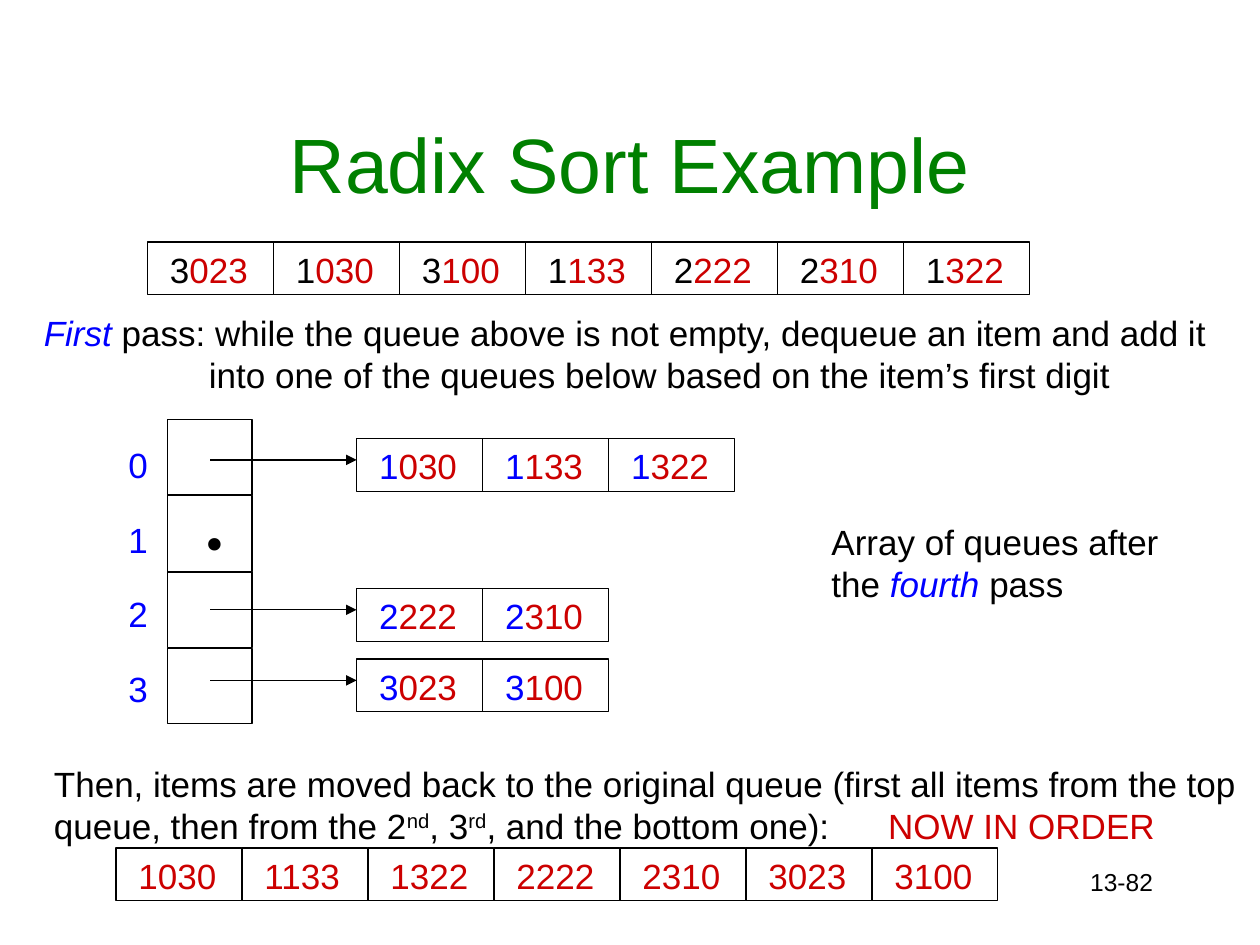
from dataclasses import dataclass

from lxml.etree import SubElement
from pptx import Presentation
from pptx.dml.color import RGBColor
from pptx.enum.shapes import MSO_CONNECTOR, MSO_SHAPE
from pptx.enum.text import MSO_ANCHOR, MSO_AUTO_SIZE, PP_ALIGN
from pptx.oxml.ns import qn
from pptx.shapes.autoshape import Shape
from pptx.slide import Slide
from pptx.text.text import Font
from pptx.util import Inches, Pt


@dataclass(frozen=True)
class Theme:
    black: str = "000000"
    blue: str = "0000FF"
    red: str = "CC0000"
    green: str = "008000"
    font: str = "Arial"
    dot_font: str = "Times New Roman"
    title_size: int = 44
    body_size: int = 20
    dot_size: int = 60
    number_size: int = 14
    line_width: float = 0.75


@dataclass(frozen=True)
class Span:
    text: str
    color: str
    italic: bool = False
    raised: bool = False


@dataclass(frozen=True)
class Queue:
    left: float
    top: float
    items: tuple[str, ...]
    lead_color: str


THEME = Theme()
CELL_WIDTH, CELL_HEIGHT = 1, 0.42
BUCKET_LEFT, BUCKET_TOP, BUCKET_STEP = 1.33, 3.33, 0.605
LABEL_TOP, LABEL_STEP = 3.47, 0.593

UNSORTED = Queue(1.17, 1.92, ("3023", "1030", "3100", "1133", "2222", "2310", "1322"), THEME.black)
SORTED = Queue(0.92, 6.73, ("1030", "1133", "1322", "2222", "2310", "3023", "3100"), THEME.red)
BUCKET_QUEUES = (
    Queue(2.83, 3.48, ("1030", "1133", "1322"), THEME.blue),
    Queue(2.83, 4.67, ("2222", "2310"), THEME.blue),
    Queue(2.83, 5.23, ("3023", "3100"), THEME.blue),
)


def style_font(font: Font, color: str, size: float, name: str = THEME.font) -> None:
    font.name = name
    font.size = Pt(size)
    font.color.rgb = RGBColor.from_string(color)


def add_text(slide: Slide, left: float, top: float, width: float, height: float,
             spans: list[Span], size: float = THEME.body_size,
             font_name: str = THEME.font) -> Shape:
    box = slide.shapes.add_textbox(Inches(left), Inches(top), Inches(width), Inches(height))
    box.text_frame.word_wrap = True
    box.text_frame.auto_size = MSO_AUTO_SIZE.SHAPE_TO_FIT_TEXT
    for span in spans:
        run = box.text_frame.paragraphs[0].add_run()
        run.text = span.text
        style_font(run.font, span.color, size, font_name)
        if span.italic:
            run.font.italic = True
        if span.raised:
            run.font._element.set("baseline", "30000")
    return box


def add_cell(slide: Slide, left: float, top: float, width: float, height: float) -> None:
    cell = slide.shapes.add_shape(
        MSO_SHAPE.RECTANGLE, Inches(left), Inches(top), Inches(width), Inches(height))
    cell.shadow.inherit = False
    cell.fill.background()
    cell.line.color.rgb = RGBColor.from_string(THEME.black)
    cell.line.width = Pt(THEME.line_width)


def add_queue(slide: Slide, queue: Queue) -> None:
    for position, item in enumerate(queue.items):
        left = queue.left + position * CELL_WIDTH
        add_cell(slide, left, queue.top, CELL_WIDTH, CELL_HEIGHT)
        if queue.lead_color == THEME.red:
            spans = [Span(item, THEME.red)]
        else:
            spans = [Span(item[0], queue.lead_color), Span(item[1:], THEME.red)]
        add_text(slide, left + 0.08, queue.top, 0.92, 0.43, spans)


def add_arrow(slide: Slide, queue: Queue) -> None:
    start, level = Inches(1.67), Inches(queue.top + 0.17)
    arrow = slide.shapes.add_connector(
        MSO_CONNECTOR.STRAIGHT, start, level, Inches(queue.left), level)
    arrow.line.color.rgb = RGBColor.from_string(THEME.black)
    arrow.line.width = Pt(THEME.line_width)
    SubElement(arrow.line._get_or_add_ln(), qn("a:tailEnd"), type="triangle")
    SubElement(arrow._element.spPr, qn("a:effectLst"))


def add_title(slide: Slide) -> None:
    title = slide.shapes.title
    title.left, title.top = Inches(0.75), Inches(0.67)
    title.width, title.height = Inches(8.5), Inches(1.25)
    title.text_frame.text = "Radix Sort Example"
    title.text_frame.vertical_anchor = MSO_ANCHOR.MIDDLE
    heading = title.text_frame.paragraphs[0]
    heading.alignment = PP_ALIGN.CENTER
    style_font(heading.runs[0].font, THEME.green, THEME.title_size)


def add_buckets(slide: Slide) -> None:
    for digit in range(4):
        add_cell(slide, BUCKET_LEFT, BUCKET_TOP + digit * BUCKET_STEP, 0.67, 0.6)
        add_text(slide, 0.92, LABEL_TOP + digit * LABEL_STEP, 0.42, 0.43,
                 [Span(str(digit), THEME.blue)])
    empty_mark = add_text(slide, 1.5, 3.4, 0.42, 1.1, [Span(".", THEME.black)],
                          THEME.dot_size, THEME.dot_font)
    empty_mark.text_frame.margin_top = Inches(0.13)
    empty_mark.text_frame.margin_bottom = 0


def add_explanations(slide: Slide) -> None:
    first_pass = add_text(slide, 0.25, 2.42, 9.5, 0.77, [
        Span("First", THEME.blue, italic=True),
        Span(" pass: while the queue above is not empty, dequeue an item and add it "
             "into one of the queues below based on the item’s first digit", THEME.black),
    ])
    hanging = first_pass.text_frame.paragraphs[0]._p.get_or_add_pPr()
    hanging.set("marL", str(Inches(1.31)))
    hanging.set("indent", str(-Inches(1.31)))

    add_text(slide, 6.5, 4.08, 3.08, 0.77, [
        Span("Array of queues after the ", THEME.black),
        Span("fourth", THEME.blue, italic=True),
        Span(" pass", THEME.black),
    ])

    move_back = add_text(slide, 0.33, 6, 9.67, 0.77, [
        Span("Then, items are moved back to the original queue "
             "(first all items from the top queue, then from the 2", THEME.black),
        Span("nd", THEME.black, raised=True),
        Span(", 3", THEME.black),
        Span("rd", THEME.black, raised=True),
        Span(", and the bottom one):\t", THEME.black),
        Span("NOW IN ORDER", THEME.red),
    ])
    tab_list = SubElement(move_back.text_frame.paragraphs[0]._p.get_or_add_pPr(), qn("a:tabLst"))
    SubElement(tab_list, qn("a:tab"), pos=str(Inches(6.62)), algn="l")


def add_page_number(slide: Slide) -> None:
    page_number = add_text(slide, 7.17, 6.83, 2.08, 0.5,
                           [Span("13-82", THEME.black)], THEME.number_size)
    page_number.text_frame.auto_size = MSO_AUTO_SIZE.NONE
    page_number.text_frame.paragraphs[0].alignment = PP_ALIGN.RIGHT


def main() -> None:
    presentation = Presentation()
    presentation.slide_width, presentation.slide_height = Inches(10), Inches(7.5)
    slide = presentation.slides.add_slide(presentation.slide_layouts[5])
    add_title(slide)
    for queue in (UNSORTED, *BUCKET_QUEUES, SORTED):
        add_queue(slide, queue)
    for queue in BUCKET_QUEUES:
        add_arrow(slide, queue)
    add_buckets(slide)
    add_explanations(slide)
    add_page_number(slide)
    presentation.save("out.pptx")


if __name__ == "__main__":
    main()
